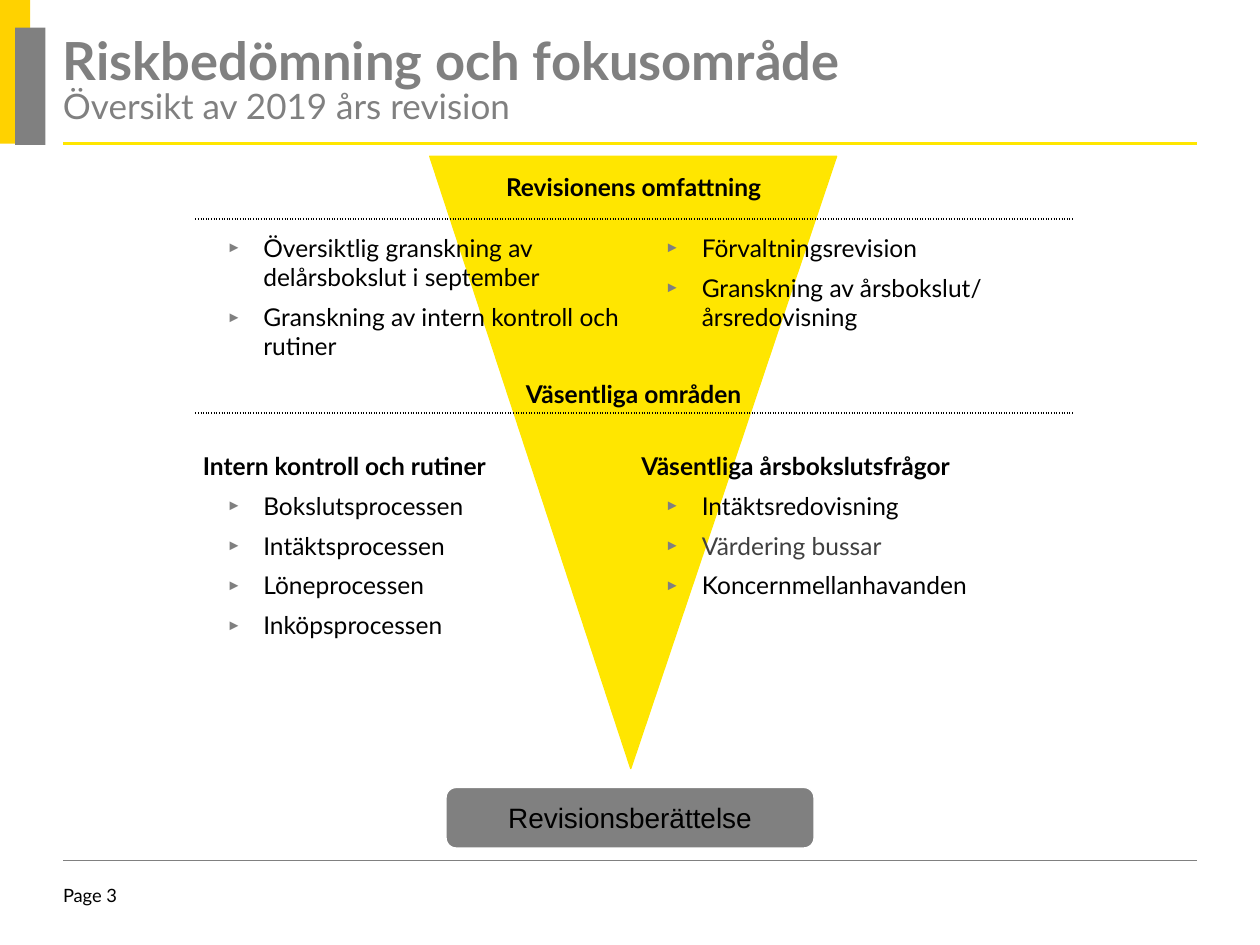
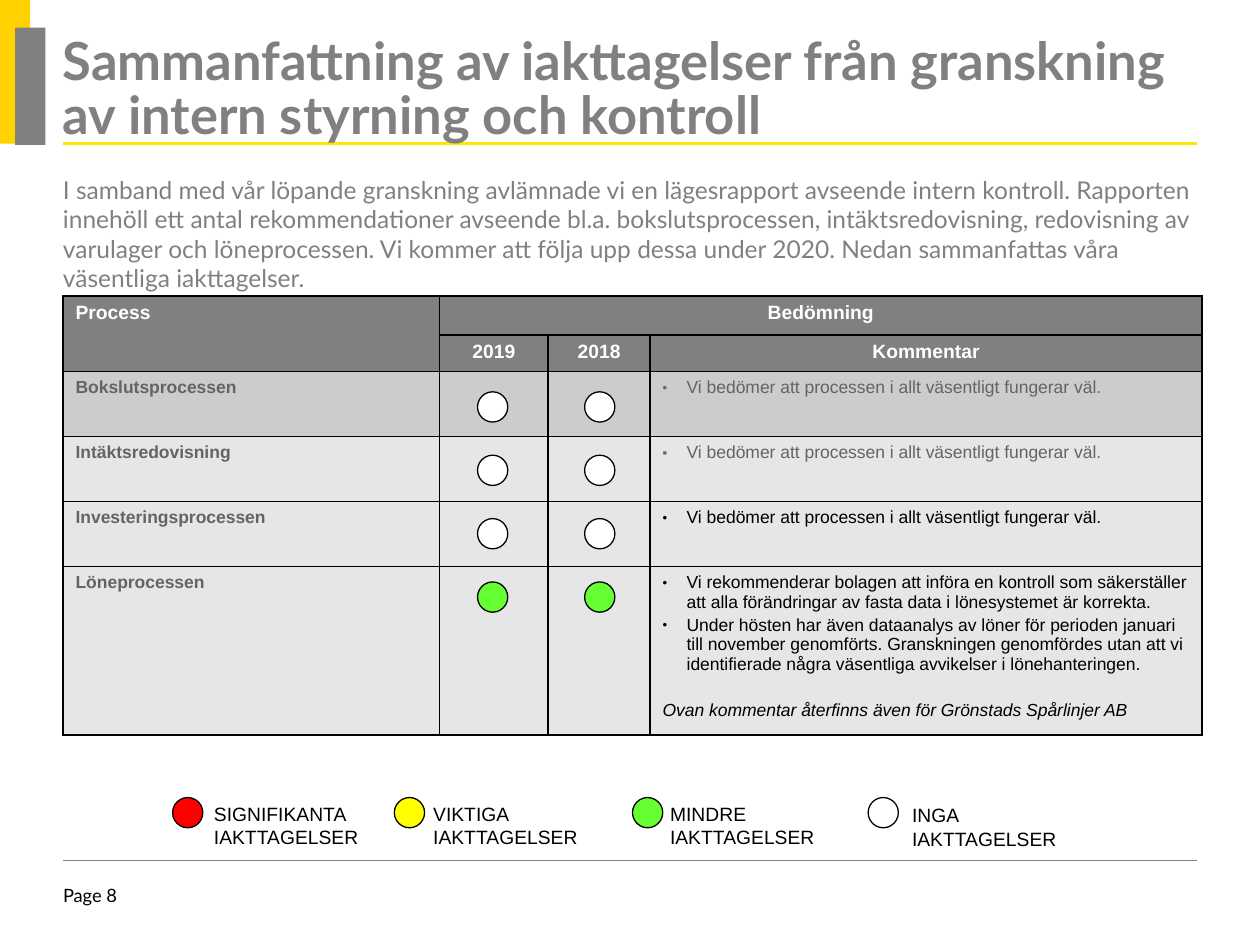
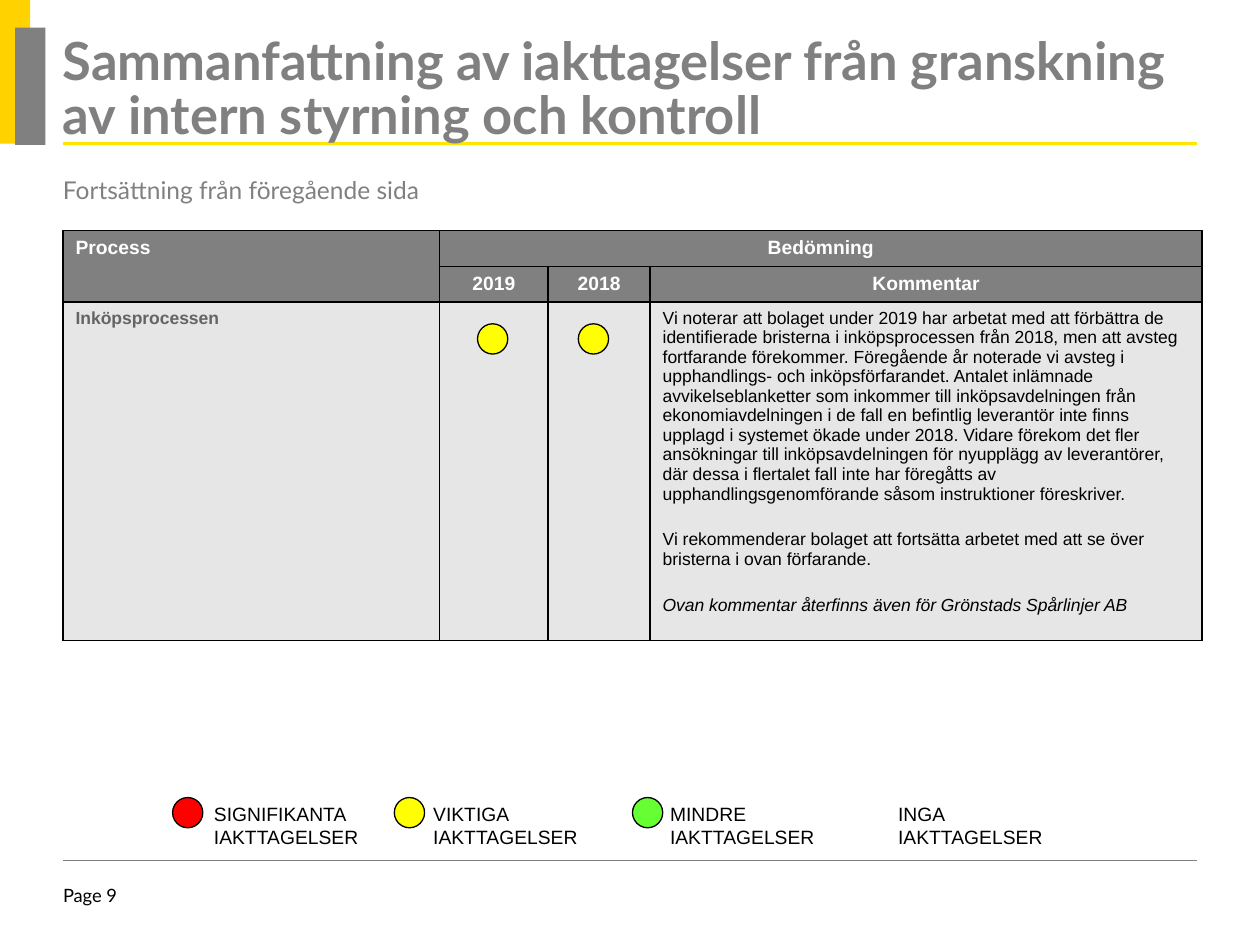
from dataclasses import dataclass, replace
from typing import Optional

from pptx import Presentation
from pptx.dml.color import RGBColor
from pptx.enum.shapes import MSO_CONNECTOR, MSO_SHAPE
from pptx.enum.text import MSO_ANCHOR, PP_ALIGN
from pptx.oxml.ns import qn
from pptx.util import Emu, Inches, Pt
from lxml.etree import SubElement

SLIDE_W, SLIDE_H = Inches(10), Inches(7.5)
GRID_COLS, GRID_ROWS = 100, 75

BLACK = RGBColor(0x00, 0x00, 0x00)
WHITE = RGBColor(0xFF, 0xFF, 0xFF)
GREY = RGBColor(0x80, 0x80, 0x80)
CHARCOAL = RGBColor(0x40, 0x40, 0x40)
PROCESS_GREY = RGBColor(0x64, 0x64, 0x64)
ROW_DARK = RGBColor(0xCC, 0xCC, 0xCC)
ROW_LIGHT = RGBColor(0xE6, 0xE6, 0xE6)
AMBER = RGBColor(0xFF, 0xD2, 0x00)
BRIGHT_YELLOW = RGBColor(0xFF, 0xE6, 0x00)
SIGNIFICANT = RGBColor(0xFF, 0x00, 0x00)
IMPORTANT = RGBColor(0xFF, 0xFF, 0x00)
MINOR = RGBColor(0x66, 0xFF, 0x33)
NONE_FOUND = WHITE

NO_TABLE_STYLE = "{2D5ABB26-0587-4C30-8999-92F81FD0307C}"
ALL_SIDES = ("L", "R", "T", "B")


@dataclass(frozen=True)
class Style:
    size: float
    font: str
    color: RGBColor
    bold: bool = False
    italic: bool = False


@dataclass(frozen=True)
class Bullet:
    char: str
    left: float
    hanging: float
    percent: int
    color: Optional[RGBColor] = None


@dataclass(frozen=True)
class Para:
    text: str
    style: Style
    before: float = 0
    align: PP_ALIGN = PP_ALIGN.LEFT
    bullet: Optional[Bullet] = None
    line_spacing: Optional[float] = None


@dataclass(frozen=True)
class Box:
    """Left, top, width and height in grid columns and rows."""
    left: float
    top: float
    width: float
    height: float

    def emu(self) -> tuple:
        return col(self.left), row(self.top), col(self.width), row(self.height)


@dataclass(frozen=True)
class Process:
    name: str
    comments: tuple
    ratings: tuple
    height: float
    fill: RGBColor = ROW_LIGHT


@dataclass(frozen=True)
class LegendItem:
    label: str
    circle_left: float
    label_left: float
    color: RGBColor


TITLE = Style(30, "Lato", GREY, bold=True)
SUBTITLE = Style(20, "Lato", GREY)
INTRO = Style(14, "Lato", GREY)
PAGE = Style(10.5, "Lato", BLACK)
SCOPE = Style(14, "Lato", BLACK)
SCOPE_HEAD = replace(SCOPE, bold=True)
HEADER = Style(11, "Arial", WHITE, bold=True)
PROCESS_NAME = Style(10, "Arial", PROCESS_GREY, bold=True)
MUTED = replace(PROCESS_NAME, bold=False)
COMMENT = Style(10, "Arial", BLACK)
FOOTNOTE = replace(COMMENT, italic=True)
LEGEND = Style(11, "Arial", BLACK)
REPORT = Style(16, "Arial", BLACK)

ARROW = Bullet("►", 0.48, 0.29, 60, GREY)
DOT = Bullet("•", 0.19, 0.19, 75)
SQUARE = replace(DOT, char="▪")

CIRCLE_SIZE = 2.4
CIRCLE_2019_LEFT = 37.9
SECTION_GAP = 15
FINDINGS_TITLE = "Sammanfattning av iakttagelser från granskning av intern styrning och kontroll"
WORKS_WELL = "Vi bedömer att processen i allt väsentligt fungerar väl."
ALSO_FOUND = Para("Ovan kommentar återfinns även för Grönstads Spårlinjer AB", FOOTNOTE, SECTION_GAP)

LEGEND_ITEMS = (
    LegendItem("SIGNIFIKANTA", 13.7, 16, SIGNIFICANT),
    LegendItem("VIKTIGA", 31.3, 33.4, IMPORTANT),
    LegendItem("MINDRE", 50.2, 52.2, MINOR),
)


def col(count: float) -> Emu:
    return Emu(round(SLIDE_W * count / GRID_COLS))


def row(count: float) -> Emu:
    return Emu(round(SLIDE_H * count / GRID_ROWS))


def add_run(paragraph, text: str, style: Style) -> None:
    run = paragraph.add_run()
    run.text = text
    font = run.font
    font.size, font.name = Pt(style.size), style.font
    font.bold, font.italic = style.bold, style.italic
    font.color.rgb = style.color


def add_bullet(paragraph, bullet: Bullet) -> None:
    props = paragraph._p.get_or_add_pPr()
    props.set("marL", str(Inches(bullet.left)))
    props.set("indent", str(-Inches(bullet.hanging)))
    if bullet.color is not None:
        SubElement(SubElement(props, qn("a:buClr")), qn("a:srgbClr")).set("val", str(bullet.color))
    SubElement(props, qn("a:buSzPct")).set("val", str(bullet.percent * 1000))
    SubElement(props, qn("a:buFont")).set("typeface", "Arial")
    SubElement(props, qn("a:buChar")).set("char", bullet.char)


def write(frame, paras: tuple) -> None:
    for index, para in enumerate(paras):
        paragraph = frame.add_paragraph() if index else frame.paragraphs[0]
        if para.bullet:
            add_bullet(paragraph, para.bullet)
        paragraph.alignment = para.align
        if index:
            paragraph.space_before = Pt(para.before)
        if para.line_spacing:
            paragraph.line_spacing = para.line_spacing
        add_run(paragraph, para.text, para.style)


def set_margins(frame, horizontal: float, vertical: float) -> None:
    frame.margin_left = frame.margin_right = Inches(horizontal)
    frame.margin_top = frame.margin_bottom = Inches(vertical)


def add_text(slide, box: Box, paras: tuple, horizontal: float = 0, vertical: float = 0):
    frame = slide.shapes.add_textbox(*box.emu()).text_frame
    frame.word_wrap = True
    set_margins(frame, horizontal, vertical)
    write(frame, paras)
    return frame


def add_block(slide, preset: MSO_SHAPE, box: Box, fill: RGBColor, outline: Optional[RGBColor] = None):
    block = slide.shapes.add_shape(preset, *box.emu())
    block.shadow.inherit = False
    block.fill.solid()
    block.fill.fore_color.rgb = fill
    if outline is None:
        block.line.fill.background()
    else:
        block.line.color.rgb = outline
        block.line.width = Pt(0.75)
    return block


def add_rule(slide, top: float, color: RGBColor, weight: float) -> None:
    rule = slide.shapes.add_connector(MSO_CONNECTOR.STRAIGHT, col(5), row(top), col(95), row(top))
    rule.line.color.rgb = color
    rule.line.width = Pt(weight)
    SubElement(rule._element.spPr, qn("a:effectLst"))


def start_slide(deck, title: str, page: int, subtitle: str = ""):
    """Add a blank slide with the shared bands, rules, title and page number."""
    slide = deck.slides.add_slide(deck.slide_layouts[6])
    add_block(slide, MSO_SHAPE.RECTANGLE, Box(0, 0, 2.4, 11.4), AMBER)
    add_block(slide, MSO_SHAPE.RECTANGLE, Box(1.2, 2.2, 2.4, 9.3), GREY)
    add_rule(slide, 11.4, BRIGHT_YELLOW, 1.5)
    add_rule(slide, 68.3, GREY, 0.25)
    add_text(slide, Box(5, 70.2, 7.9, 2.2), (Para(f"Page {page}", PAGE),))
    frame = add_text(slide, Box(5, 3, 90, 9.4), (Para(title, TITLE, line_spacing=0.85),))
    if subtitle:
        heading = frame.paragraphs[0]
        heading.add_line_break()
        add_run(heading, subtitle, SUBTITLE)
    return slide


def add_grid(slide, left: float, top: float, widths: tuple, heights: tuple):
    """Add an unstyled table with the given column widths and row heights."""
    box = Box(left, top, sum(widths), sum(heights))
    table = slide.shapes.add_table(len(heights), len(widths), *box.emu()).table
    table.first_row = table.horz_banding = False
    table._tbl.tblPr.find(qn("a:tableStyleId")).text = NO_TABLE_STYLE
    for column, width in zip(table.columns, widths):
        column.width = col(width)
    for line, height in zip(table.rows, heights):
        line.height = row(height)
    return table


def set_borders(cell, sides: tuple, dash: str = "solid") -> None:
    props = cell._tc.get_or_add_tcPr()
    for side in sides:
        border = SubElement(props, qn(f"a:ln{side}"), w=str(Pt(1)))
        SubElement(SubElement(border, qn("a:solidFill")), qn("a:srgbClr")).set("val", str(BLACK))
        SubElement(border, qn("a:prstDash")).set("val", dash)


def fill_cell(cell, fill: RGBColor) -> None:
    set_borders(cell, ALL_SIDES)
    cell.fill.solid()
    cell.fill.fore_color.rgb = fill


def add_circle(slide, left: float, top: float, color: RGBColor) -> None:
    add_block(slide, MSO_SHAPE.FLOWCHART_CONNECTOR, Box(left, top, CIRCLE_SIZE, CIRCLE_SIZE), color, BLACK)


def add_process_table(slide, top: float, header_heights: tuple, processes: tuple,
                      first_circle_top: float, circle_2018_left: float) -> None:
    heights = header_heights + tuple(process.height for process in processes)
    table = add_grid(slide, 5, top, (29.9, 8.6, 8.1, 43.8), heights)
    for index in range(len(heights)):
        fill = GREY if index < 2 else processes[index - 2].fill
        for cell in table.rows[index].cells:
            fill_cell(cell, fill)
    table.cell(0, 0).merge(table.cell(1, 0))
    table.cell(0, 1).merge(table.cell(0, 3))
    write(table.cell(0, 0).text_frame, (Para("Process", HEADER),))
    for line, column, text in ((0, 1, "Bedömning"), (1, 1, "2019"), (1, 2, "2018"), (1, 3, "Kommentar")):
        write(table.cell(line, column).text_frame, (Para(text, HEADER, align=PP_ALIGN.CENTER),))
    for index, process in enumerate(processes):
        write(table.cell(index + 2, 0).text_frame, (Para(process.name, PROCESS_NAME),))
        write(table.cell(index + 2, 3).text_frame, process.comments)
        for left, color in zip((CIRCLE_2019_LEFT, circle_2018_left), process.ratings):
            add_circle(slide, left, first_circle_top + 5.03 * index, color)


def add_legend_label(slide, label: str, left: float, top: float = 63.2) -> None:
    lines = (Para(label, LEGEND), Para("IAKTTAGELSER", LEGEND))
    add_text(slide, Box(left, top, 14.4, 4.7), lines, 0.1, 0.05)


def add_legend(slide) -> None:
    for item in LEGEND_ITEMS:
        add_circle(slide, item.circle_left, 63.3, item.color)
        add_legend_label(slide, item.label, item.label_left)


def add_intro(slide, text: str) -> None:
    add_text(slide, Box(5, 13.4, 90, 29.3), (Para(text, INTRO),), 0, 0.05)


def arrows(*texts: str) -> tuple:
    return tuple(Para(text, SCOPE, 6, bullet=ARROW) for text in texts)


def build_scope(deck) -> None:
    slide = start_slide(deck, "Riskbedömning och fokusområde", 3, "Översikt av 2019 års revision")
    funnel = add_block(slide, MSO_SHAPE.ISOSCELES_TRIANGLE, Box(34.1, 12.4, 32.3, 48.6),
                       BRIGHT_YELLOW, BRIGHT_YELLOW)
    funnel.adjustments[0] = 0.506
    funnel.rotation = 180

    table = add_grid(slide, 15.5, 12.3, (34.8, 34.8), (5.1, 12.4, 3, 23.1))
    for line, heading in ((0, "Revisionens omfattning"), (2, "Väsentliga områden")):
        for cell in table.rows[line].cells:
            set_borders(cell, ("B",), "sysDot")
        banner = table.cell(line, 0)
        banner.merge(table.cell(line, 1))
        banner.vertical_anchor = MSO_ANCHOR.MIDDLE
        banner.margin_left = banner.margin_right = Inches(0.05)
        banner.margin_top = banner.margin_bottom = Inches(0.02)
        write(banner.text_frame, (Para(heading, SCOPE_HEAD, align=PP_ALIGN.CENTER),))

    valuation = Para("Värdering bussar", replace(SCOPE, color=CHARCOAL), 6, bullet=ARROW)
    scope_cells = (
        (1, 0, 0.11, arrows("Översiktlig granskning av delårsbokslut i september",
                            "Granskning av intern kontroll och rutiner")),
        (1, 1, 0.11, arrows("Förvaltningsrevision", "Granskning av årsbokslut/ årsredovisning")),
        (3, 0, 0.3, (Para("Intern kontroll och rutiner", SCOPE_HEAD),
                     *arrows("Bokslutsprocessen", "Intäktsprocessen", "Löneprocessen", "Inköpsprocessen"))),
        (3, 1, 0.3, (Para("Väsentliga årsbokslutsfrågor", SCOPE_HEAD), *arrows("Intäktsredovisning"),
                     valuation, *arrows("Koncernmellanhavanden"))),
    )
    for line, column, margin_top, paras in scope_cells:
        cell = table.cell(line, column)
        cell.margin_left = cell.margin_right = Inches(0.06)
        cell.margin_top, cell.margin_bottom = Inches(margin_top), Inches(0.11)
        write(cell.text_frame, paras)

    report = add_block(slide, MSO_SHAPE.ROUNDED_RECTANGLE, Box(35.4, 62.5, 29.2, 4.8), GREY, WHITE)
    report.text_frame.vertical_anchor = MSO_ANCHOR.MIDDLE
    write(report.text_frame, (Para("Revisionsberättelse", REPORT, align=PP_ALIGN.CENTER),))


def build_findings(deck) -> None:
    slide = start_slide(deck, FINDINGS_TITLE, 8)
    add_intro(slide, "I samband med vår löpande granskning avlämnade vi en lägesrapport avseende intern "
                     "kontroll. Rapporten innehöll ett antal rekommendationer avseende bl.a. "
                     "bokslutsprocessen, intäktsredovisning, redovisning av varulager och löneprocessen. "
                     "Vi kommer att följa upp dessa under 2020. Nedan sammanfattas våra väsentliga "
                     "iakttagelser.")
    clean = (NONE_FOUND, NONE_FOUND)
    payroll = (
        Para("Vi rekommenderar bolagen att införa en kontroll som säkerställer att alla förändringar av "
             "fasta data i lönesystemet är korrekta.", COMMENT, bullet=DOT),
        Para("Under hösten har även dataanalys av löner för perioden januari till november genomförts. "
             "Granskningen genomfördes utan att vi identifierade några väsentliga avvikelser i "
             "lönehanteringen.", COMMENT, 2, bullet=DOT),
        ALSO_FOUND,
    )
    processes = (
        Process("Bokslutsprocessen", (Para(WORKS_WELL, MUTED, bullet=DOT),), clean, 5.16, ROW_DARK),
        Process("Intäktsredovisning", (Para(WORKS_WELL, MUTED, bullet=SQUARE),), clean, 5.16),
        Process("Investeringsprocessen", (Para(WORKS_WELL, COMMENT, bullet=DOT),), clean, 5.16),
        Process("Löneprocessen", payroll, (MINOR, MINOR), 12.7),
    )
    add_process_table(slide, 23.5, (3.1, 2.9), processes, 31.1, 46.4)
    add_legend(slide)
    add_circle(slide, 68.9, 63.3, NONE_FOUND)
    add_legend_label(slide, "INGA", 71.4, 63.3)


def build_findings_continued(deck) -> None:
    slide = start_slide(deck, FINDINGS_TITLE, 9)
    add_intro(slide, "Fortsättning från föregående sida")
    purchasing = (
        Para("Vi noterar att bolaget under 2019 har arbetat med att förbättra de identifierade bristerna i "
             "inköpsprocessen från 2018, men att avsteg fortfarande förekommer. Föregående år noterade vi "
             "avsteg i upphandlings- och inköpsförfarandet. Antalet inlämnade avvikelseblanketter som "
             "inkommer till inköpsavdelningen från ekonomiavdelningen i de fall en befintlig leverantör "
             "inte finns upplagd i systemet ökade under 2018. Vidare förekom det fler ansökningar till "
             "inköpsavdelningen för nyupplägg av leverantörer, där dessa i flertalet fall inte har "
             "föregåtts av upphandlingsgenomförande såsom instruktioner föreskriver.", COMMENT),
        Para("Vi rekommenderar bolaget att fortsätta arbetet med att se över bristerna i ovan förfarande.",
             COMMENT, SECTION_GAP),
        ALSO_FOUND,
    )
    processes = (Process("Inköpsprocessen", purchasing, (IMPORTANT, IMPORTANT), 25.4),)
    add_process_table(slide, 18.3, (2.7, 2.7), processes, 25.7, 45.9)
    add_legend(slide)
    add_legend_label(slide, "INGA", 70.3)


def main() -> None:
    deck = Presentation()
    deck.slide_width, deck.slide_height = SLIDE_W, SLIDE_H
    build_scope(deck)
    build_findings(deck)
    build_findings_continued(deck)
    deck.save("out.pptx")


if __name__ == "__main__":
    main()
